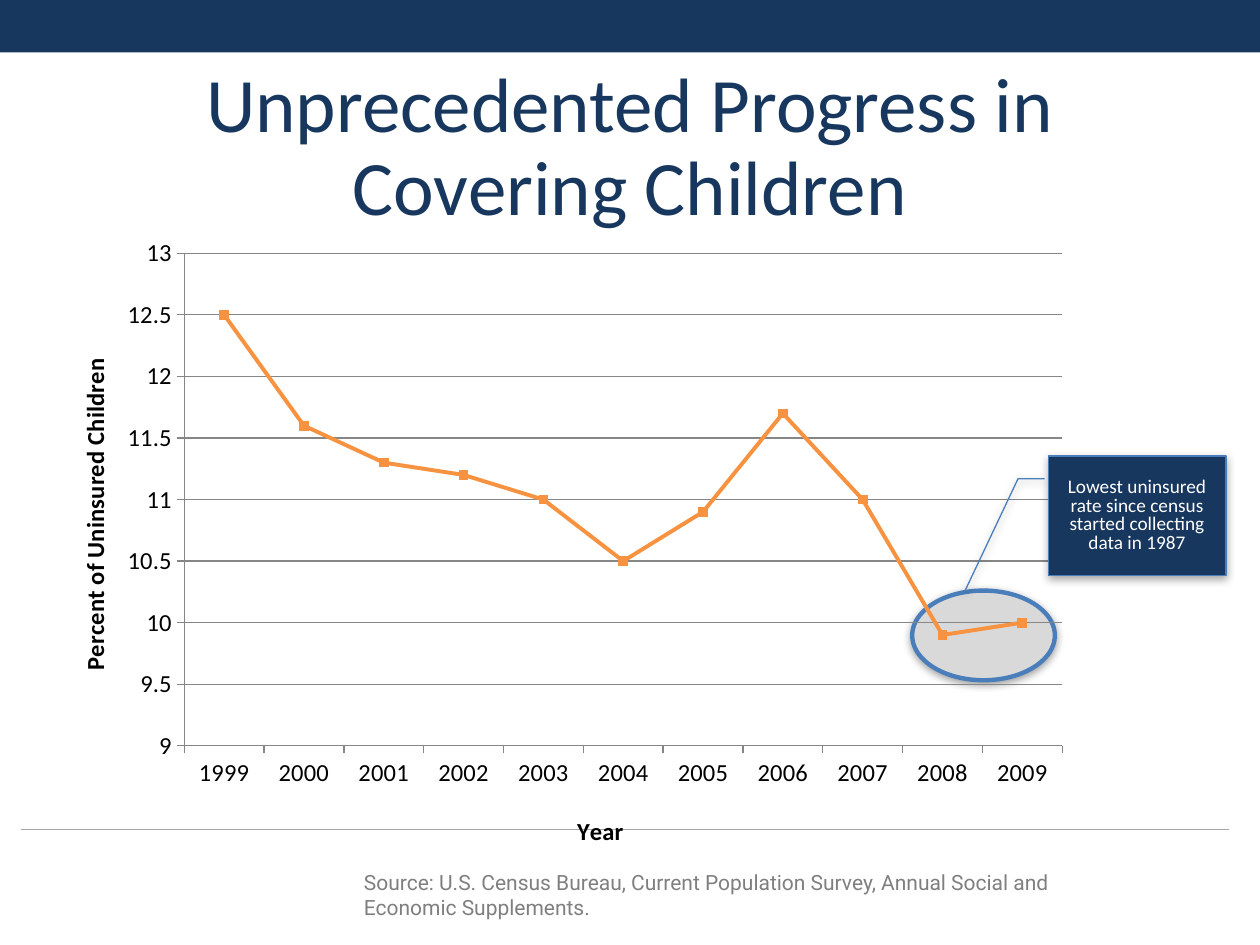
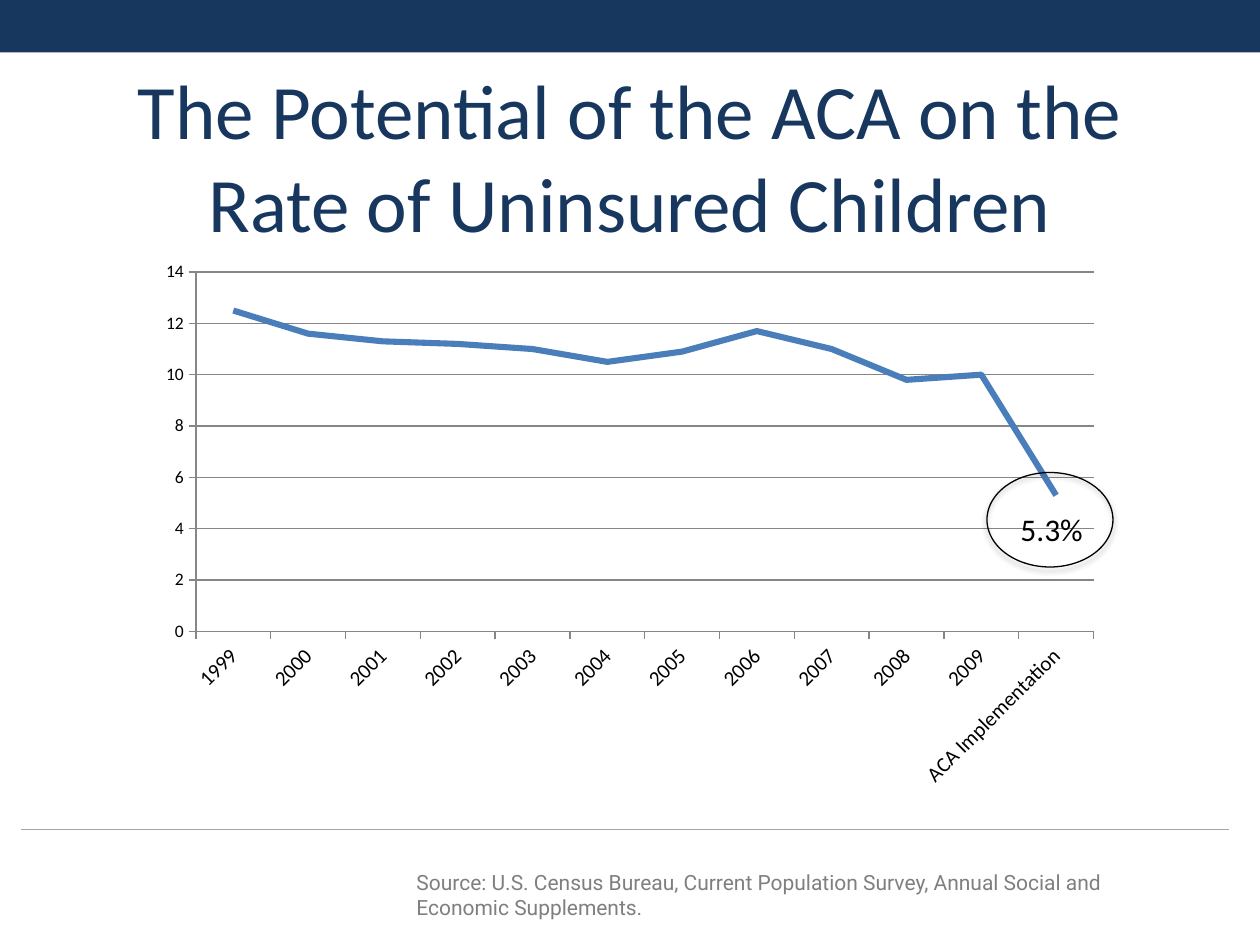
from dataclasses import dataclass
from typing import Optional

from lxml import etree
from pptx import Presentation
from pptx import util as u
from pptx.chart import data as cd
from pptx.dml import color as dml
from pptx.enum import chart as ec, shapes as es, text as et
from pptx.oxml import ns, parse_xml

COLORS = {
    "navy": "17375E", "rule": "A6A6A6", "source": "7F7F7F", "grid": "868686",
    "blue": "4A7EBB", "orange": "F79240", "highlight": "D9D9D9",
    "black": "000000", "white": "FFFFFF",
}
FONT, SOURCE_FONT = "Calibri", "Roboto"
SOURCE = ("Source: U.S. Census Bureau, Current Population Survey, "
          "Annual Social and Economic Supplements.")
YEARS = [str(y) for y in range(1999, 2010)]


@dataclass(frozen=True)
class Box:
    left: float
    top: float
    width: float
    height: float

    def emu(self) -> list:
        return [u.Pt(v) for v in (self.left, self.top, self.width, self.height)]


@dataclass(frozen=True)
class Shadow:
    alpha: int
    blur: float
    dist: float


@dataclass(frozen=True)
class AxisTitle:
    text: str
    x: float
    y: float
    rotation: int = 0


@dataclass(frozen=True)
class LineChart:
    box: Box
    plot: Box
    cats: list
    vals: list
    color: str
    weight: float
    low: float
    high: float
    step: float
    cat_size: int
    val_size: int
    marker: int = 0
    label_rotation: int = 0
    cat_title: Optional[AxisTitle] = None
    val_title: Optional[AxisTitle] = None


def rgb(name: str) -> dml.RGBColor:
    return dml.RGBColor.from_string(COLORS[name])


def style_font(font, size: float, color: str, name: str = FONT) -> None:
    font.size, font.name = u.Pt(size), name
    font.color.rgb = rgb(color)


def style_line(line, color: str, width: float = 0.75) -> None:
    line.color.rgb = rgb(color)
    line.width = u.Pt(width)


def set_text(sp, content: str, size: float, color: str, name: str = FONT,
             align=et.PP_ALIGN.LEFT, anchor=et.MSO_ANCHOR.TOP, spacing: float = 1.0) -> None:
    tf = sp.text_frame
    tf.text = content
    tf.word_wrap = True
    tf.auto_size = et.MSO_AUTO_SIZE.NONE
    tf.vertical_anchor = anchor
    p = tf.paragraphs[0]
    p.alignment, p.line_spacing = align, spacing
    for r in p.runs:
        style_font(r.font, size, color, name)


def add_shadow(sp, shadow: Shadow) -> None:
    effects = sp.element.spPr.find(ns.qn("a:effectLst"))
    outer = etree.SubElement(
        effects, ns.qn("a:outerShdw"), blurRad=str(u.Pt(shadow.blur)),
        dist=str(u.Pt(shadow.dist)), dir="5400000", rotWithShape="0")
    tint = etree.SubElement(outer, ns.qn("a:srgbClr"), val=COLORS["black"])
    etree.SubElement(tint, ns.qn("a:alpha"), val=str(shadow.alpha * 1000))


def add_shape(s, kind, box: Box, fill: Optional[str], line: Optional[str],
              width: float = 0.75, shadow: Optional[Shadow] = None):
    sp = s.shapes.add_shape(kind, *box.emu())
    sp.shadow.inherit = False
    if fill:
        sp.fill.solid()
        sp.fill.fore_color.rgb = rgb(fill)
    else:
        sp.fill.background()
    if line:
        style_line(sp.line, line, width)
    else:
        sp.line.fill.background()
    if shadow:
        add_shadow(sp, shadow)
    return sp


def build_master(prs, s) -> None:
    band = add_shape(s, es.MSO_SHAPE.RECTANGLE, Box(0, 0, 720, 30), "navy", None)
    rule = s.shapes.add_connector(
        es.MSO_CONNECTOR.STRAIGHT, u.Pt(12), u.Pt(474), u.Pt(702), u.Pt(474))
    style_line(rule.line, "rule")
    etree.SubElement(rule.element.spPr, ns.qn("a:effectLst"))
    for i, sp in enumerate((band, rule)):
        sp.element.xpath(".//p:cNvPr")[0].set("id", str(100 + i))
        prs.slide_master.shapes.element.append(sp.element)


def add_title(s, content: str, top: float, spacing: float) -> None:
    sp = s.shapes.title
    sp.left, sp.top, sp.width, sp.height = Box(36, top, 648, 81.5).emu()
    set_text(sp, content, 44, "navy", align=et.PP_ALIGN.CENTER,
             anchor=et.MSO_ANCHOR.MIDDLE, spacing=spacing)


def add_source(s, left: float) -> None:
    sp = s.shapes.add_textbox(*Box(left, 492, 448.5, 39.5).emu())
    set_text(sp, SOURCE, 12, "source", SOURCE_FONT)
    tf = sp.text_frame
    tf.margin_left = tf.margin_right = u.Pt(10)
    tf.margin_top = tf.margin_bottom = u.Pt(5)


def set_layout(parent, index: int, **parts) -> None:
    for old in parent.findall(ns.qn("c:layout")):
        parent.remove(old)
    items = "".join(f'<c:{k} val="{v}"/>' for k, v in parts.items())
    parent.insert(index, parse_xml(
        f'<c:layout {ns.nsdecls("c")}><c:manualLayout>{items}</c:manualLayout></c:layout>'))


def set_axis_title(axis, title: AxisTitle) -> None:
    tf = axis.axis_title.text_frame
    tf.text = title.text
    for r in tf.paragraphs[0].runs:
        style_font(r.font, 14, "black")
        r.font.bold = True
    element = axis.axis_title.format and axis.axis_title.element \
        if hasattr(axis.axis_title, "element") else axis.element.find(ns.qn("c:title"))
    body = element.find(".//" + ns.qn("a:bodyPr"))
    body.set("rot", str(title.rotation * 60000))
    body.set("vert", "horz")
    set_layout(element, 1, xMode="edge", yMode="edge", x=title.x, y=title.y)


def style_axis(axis, size: int, title: Optional[AxisTitle]) -> None:
    axis.major_tick_mark = ec.XL_TICK_MARK.OUTSIDE
    axis.minor_tick_mark = ec.XL_TICK_MARK.NONE
    style_font(axis.tick_labels.font, size, "black")
    style_line(axis.format.line, "grid")
    axis.has_title = title is not None
    if title:
        set_axis_title(axis, title)


def add_line_chart(s, c: LineChart) -> None:
    data = cd.CategoryChartData()
    data.categories = c.cats
    data.add_series("Series 1", c.vals)
    kind = ec.XL_CHART_TYPE.LINE_MARKERS if c.marker else ec.XL_CHART_TYPE.LINE
    chart = s.shapes.add_chart(kind, *c.box.emu(), data).chart
    chart.has_legend = chart.has_title = False
    style_font(chart.font, 10, "black")
    cat, val = chart.category_axis, chart.value_axis
    style_axis(cat, c.cat_size, c.cat_title)
    style_axis(val, c.val_size, c.val_title)
    val.minimum_scale, val.maximum_scale, val.major_unit = c.low, c.high, c.step
    val.has_major_gridlines = True
    style_line(val.major_gridlines.format.line, "grid")
    cat.has_major_gridlines = False
    if c.label_rotation:
        cat.tick_labels.font
        body = cat.format and chart.element.find(
            f".//{ns.qn('c:catAx')}/{ns.qn('c:txPr')}/{ns.qn('a:bodyPr')}")
        body.set("rot", str(c.label_rotation * 60000))
        body.set("vert", "horz")
    plot = chart.plots[0]
    plot.vary_by_categories = False
    series = plot.series[0]
    series.smooth = False
    style_line(series.format.line, c.color, c.weight)
    if c.marker:
        series.marker.style = ec.XL_MARKER_STYLE.SQUARE
        series.marker.size = c.marker
        series.marker.format.fill.solid()
        series.marker.format.fill.fore_color.rgb = rgb(c.color)
        style_line(series.marker.format.line, c.color)
    else:
        series.marker.style = ec.XL_MARKER_STYLE.NONE
    area = chart.element.find(".//" + ns.qn("c:plotArea"))
    set_layout(area, 0, layoutTarget="inner", xMode="edge", yMode="edge",
               x=round((c.plot.left - c.box.left) / c.box.width, 4),
               y=round((c.plot.top - c.box.top) / c.box.height, 4),
               w=round(c.plot.width / c.box.width, 4),
               h=round(c.plot.height / c.box.height, 4))


def build_progress(s) -> None:
    add_title(s, "Unprecedented Progress in Covering Children", 44.5, 0.9)
    add_shape(s, es.MSO_SHAPE.OVAL, Box(521.25, 337.5, 81.5, 51.25),
              "highlight", "blue", 2.5, Shadow(38, 5, 1.6))
    add_source(s, 198)
    add_line_chart(s, LineChart(
        box=Box(24, 129, 594.5, 366.5), plot=Box(105.25, 144.75, 501.75, 281.5),
        cats=YEARS, vals=[12.5, 11.6, 11.3, 11.2, 11, 10.5, 10.9, 11.7, 11, 9.9, 10],
        color="orange", weight=2.25, low=9, high=13, step=0.5,
        cat_size=14, val_size=14, marker=5,
        cat_title=AxisTitle("Year", 0.51, 0.91),
        val_title=AxisTitle("Percent of Uninsured Children", 0.03, 0.2, -90)))
    sp = add_shape(s, es.MSO_SHAPE.LINE_CALLOUT_2, Box(599, 260.5, 101.5, 68.5),
                   "navy", "blue", shadow=Shadow(35, 5, 1.8))
    for i, v in enumerate((0.19, -0.02, 0.19, -0.17, 1.13, -0.47)):
        sp.adjustments[i] = v
    set_text(sp, "Lowest uninsured rate since census started collecting data in 1987",
             11, "white", align=et.PP_ALIGN.CENTER, anchor=et.MSO_ANCHOR.MIDDLE, spacing=0.8)


def build_potential(s) -> None:
    add_title(s, "The Potential of the ACA on the Rate of Uninsured Children", 48, 1.0)
    add_source(s, 228)
    add_line_chart(s, LineChart(
        box=Box(84, 144, 552, 312), plot=Box(112, 155.5, 513, 205.25),
        cats=YEARS + ["ACA Implementation"],
        vals=[12.5, 11.6, 11.3, 11.2, 11, 10.5, 10.9, 11.7, 11, 9.8, 10, 5.3],
        color="blue", weight=3.5, low=0, high=14, step=2,
        cat_size=12, val_size=10, label_rotation=-45))
    add_shape(s, es.MSO_SHAPE.OVAL, Box(564, 270, 72, 54), None, "black",
              shadow=Shadow(35, 3.1, 1.8))
    sp = s.shapes.add_textbox(*Box(576, 288, 66, 29).emu())
    set_text(sp, "5.3%", 18, "black")


def main() -> None:
    prs = Presentation()
    prs.slide_width, prs.slide_height = u.Pt(720), u.Pt(540)
    title_only = prs.slide_layouts[5]
    progress, potential = (prs.slides.add_slide(title_only) for _ in range(2))
    build_master(prs, progress)
    build_progress(progress)
    build_potential(potential)
    prs.save("out.pptx")


if __name__ == "__main__":
    main()
